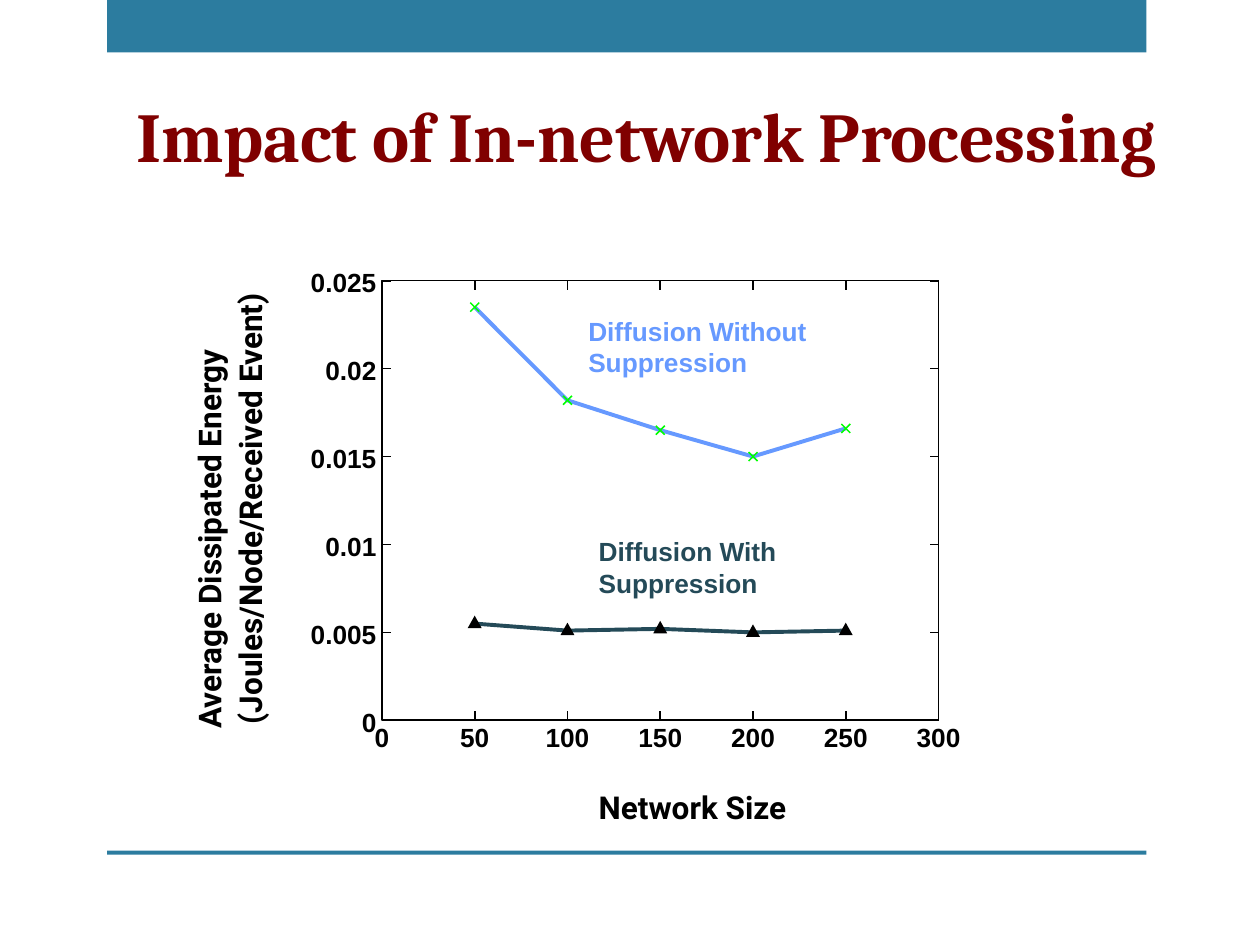
"""Build the slide on the impact of in-network processing on dissipated energy."""

from dataclasses import dataclass
from typing import NamedTuple, Optional

import lxml.etree
import pptx
import pptx.dml.color
import pptx.enum.shapes
import pptx.enum.text
import pptx.oxml.ns
import pptx.util

Cm = pptx.util.Cm
Anchor = pptx.enum.text.MSO_ANCHOR
AutoSize = pptx.enum.text.MSO_AUTO_SIZE
Shapes = pptx.enum.shapes.MSO_SHAPE


@dataclass(frozen=True)
class Theme:
    band: str = "2C7C9F"
    title: str = "800000"
    ink: str = "000000"
    with_suppression: str = "244A58"
    without_suppression: str = "6699FF"
    cross: str = "00FF00"
    title_font: str = "Cambria"
    axis_font: str = "Roboto"
    label_font: str = "Arial"
    title_size: float = 40
    axis_size: float = 18
    label_size: float = 15
    thin: float = 0.88
    thick: float = 2.25


class Point(NamedTuple):
    x: float
    y: float


class Box(NamedTuple):
    left: float
    top: float
    width: float
    height: float


class AxisTitle(NamedTuple):
    text: str
    box: Box
    rotation: float = 0


@dataclass(frozen=True)
class Series:
    label: str
    label_box: Box
    color: str
    marker: str
    energies: tuple[float, ...]


THEME = Theme()
PLOT = Box(7.7, 5.66, 11.22, 8.86)
SIZE_STEP, SIZE_MAX = 50, 300
ENERGY_STEP, ENERGY_MAX = 0.005, 0.025
TICK = 0.18
LABEL_HEIGHT = 0.64
BANDS = (Box(2.16, 0, 20.95, 1.06), Box(2.16, 17.15, 20.95, 0.08))
AXIS_TITLES = (
    AxisTitle("Average Dissipated Energy", Box(0.03, 10.13, 8.36, 0.76), 270),
    AxisTitle("(Joules/Node/Received Event)", Box(0.51, 9.7, 9.04, 0.76), 270),
    AxisTitle("Network Size", Box(12.07, 15.88, 3.96, 0.76)),
)
SERIES = (
    Series("Diffusion With Suppression", Box(12.07, 10.8, 5.44, 1.27),
           THEME.with_suppression, "triangle",
           (0.0055, 0.0051, 0.0052, 0.005, 0.0051)),
    Series("Diffusion Without Suppression", Box(11.86, 6.35, 5.08, 1.27),
           THEME.without_suppression, "cross",
           (0.0235, 0.0182, 0.0165, 0.015, 0.0166)),
)


def rgb(color: str) -> pptx.dml.color.RGBColor:
    """Turn a hex colour into an RGB colour."""
    return pptx.dml.color.RGBColor.from_string(color)


def write(frame, text: str, *, font: str, size: float, color: str) -> None:
    """Fill a text frame with one bold, left-aligned paragraph."""
    frame.text = text
    paragraph = frame.paragraphs[0]
    paragraph.alignment = pptx.enum.text.PP_ALIGN.LEFT
    style = paragraph.runs[0].font
    style.name, style.size, style.bold = font, pptx.util.Pt(size), True
    style.color.rgb = rgb(color)


def add_label(slide, text: str, box: Box, *, wrap: bool = False,
              rotation: float = 0, font: str = THEME.label_font,
              size: float = THEME.label_size, color: str = THEME.ink) -> None:
    """Add a text box without margins."""
    label = slide.shapes.add_textbox(*map(Cm, box))
    label.rotation = rotation
    frame = label.text_frame
    frame.margin_left = frame.margin_top = 0
    frame.margin_right = frame.margin_bottom = 0
    frame.word_wrap = wrap
    frame.auto_size = AutoSize.SHAPE_TO_FIT_TEXT
    write(frame, text, font=font, size=size, color=color)


def paint(shape, *, fill: Optional[str] = None, line: Optional[str] = None,
          width: float = THEME.thin) -> None:
    """Set fill and outline, leaving out whichever is not given."""
    shape.shadow.inherit = False
    if fill:
        shape.fill.solid()
        shape.fill.fore_color.rgb = rgb(fill)
    else:
        shape.fill.background()
    if line:
        shape.line.color.rgb = rgb(line)
        shape.line.width = pptx.util.Pt(width)
    else:
        shape.line.fill.background()


def add_rectangle(slide, box: Box, **look):
    """Add a painted rectangle."""
    rectangle = slide.shapes.add_shape(Shapes.RECTANGLE, *map(Cm, box))
    paint(rectangle, **look)
    return rectangle


def add_line(slide, start: Point, end: Point, color: str = THEME.ink):
    """Add a thin straight connector without a shadow."""
    line = slide.shapes.add_connector(
        pptx.enum.shapes.MSO_CONNECTOR.STRAIGHT, *map(Cm, (*start, *end)))
    line.line.color.rgb = rgb(color)
    line.line.width = pptx.util.Pt(THEME.thin)
    lxml.etree.SubElement(line._element.spPr, pptx.oxml.ns.qn("a:effectLst"))
    return line


def add_outline(slide, points: list[Point], *, close: bool, **look) -> None:
    """Add a painted freeform through the points."""
    start, *rest = [(Cm(point.x), Cm(point.y)) for point in points]
    builder = slide.shapes.build_freeform(*start)
    builder.add_line_segments(rest, close=close)
    paint(builder.convert_to_shape(), **look)


def locate(size: float, energy: float) -> Point:
    """Place a network size and an energy on the plot."""
    return Point(PLOT.left + PLOT.width * size / SIZE_MAX,
                 PLOT.top + PLOT.height * (1 - energy / ENERGY_MAX))


def label_width(text: str) -> float:
    """Give the width of a number, whose point is half as wide as a digit."""
    return 0.295 * (len(text) - text.count(".") / 2)


def add_axes(slide) -> None:
    """Draw the plot frame, its inward ticks and the tick labels."""
    frame = add_rectangle(slide, PLOT, line=THEME.ink)
    right, bottom = PLOT.left + PLOT.width, PLOT.top + PLOT.height
    for energy in (ENERGY_STEP * i for i in range(6)):
        y = locate(0, energy).y
        for x, inward in ((PLOT.left, TICK), (right, -TICK)):
            add_line(slide, Point(x, y), Point(x + inward, y))
        text = f"{energy:g}"
        width = label_width(text)
        add_label(slide, text, Box(7.59 - width, y - 0.29, width, LABEL_HEIGHT))
    for size in range(0, SIZE_MAX + 1, SIZE_STEP):
        x = locate(size, 0).x
        for y, inward, side in ((bottom, -TICK, 2), (PLOT.top, TICK, 0)):
            tick = add_line(slide, Point(x, y), Point(x, y + inward))
            if size * 2 == SIZE_MAX:
                tick.begin_connect(frame, side)
        width = label_width(str(size))
        add_label(slide, str(size), Box(x - width / 2, 14.55, width, LABEL_HEIGHT))


def add_marker(slide, kind: str, x: float, y: float) -> None:
    """Mark a measured point with a triangle or a cross."""
    if kind == "triangle":
        corners = [Point(x, y - 0.16), Point(x - 0.14, y + 0.09), Point(x + 0.14, y + 0.09)]
        add_outline(slide, corners, close=True, fill=THEME.ink)
    else:
        for rise in (0.09, -0.09):
            add_line(slide, Point(x - 0.09, y + rise), Point(x + 0.09, y - rise), THEME.cross)


def add_series(slide, series: Series) -> None:
    """Draw the label, curve and markers of one series."""
    add_label(slide, series.label, series.label_box, wrap=True, color=series.color)
    points = [locate(SIZE_STEP * i, energy) for i, energy in enumerate(series.energies, 1)]
    add_outline(slide, points, close=False, line=series.color, width=THEME.thick)
    for point in points:
        add_marker(slide, series.marker, *point)


def main() -> None:
    """Build and save the slide."""
    deck = pptx.Presentation()
    deck.slide_width, deck.slide_height = Cm(25.4), Cm(19.05)
    slide = deck.slides.add_slide(deck.slide_layouts[5])
    for band in BANDS:
        add_rectangle(slide, band, fill=THEME.band)
    title = slide.shapes.title
    title.left, title.top, title.width, title.height = map(Cm, (2.49, 1.4, 22.2, 2.29))
    title.text_frame.vertical_anchor = Anchor.BOTTOM
    write(title.text_frame, "Impact of In-network Processing",
          font=THEME.title_font, size=THEME.title_size, color=THEME.title)
    add_axes(slide)
    for text, box, rotation in AXIS_TITLES:
        add_label(slide, text, box, rotation=rotation,
                  font=THEME.axis_font, size=THEME.axis_size)
    for series in SERIES:
        add_series(slide, series)
    deck.save("out.pptx")


if __name__ == "__main__":
    main()
